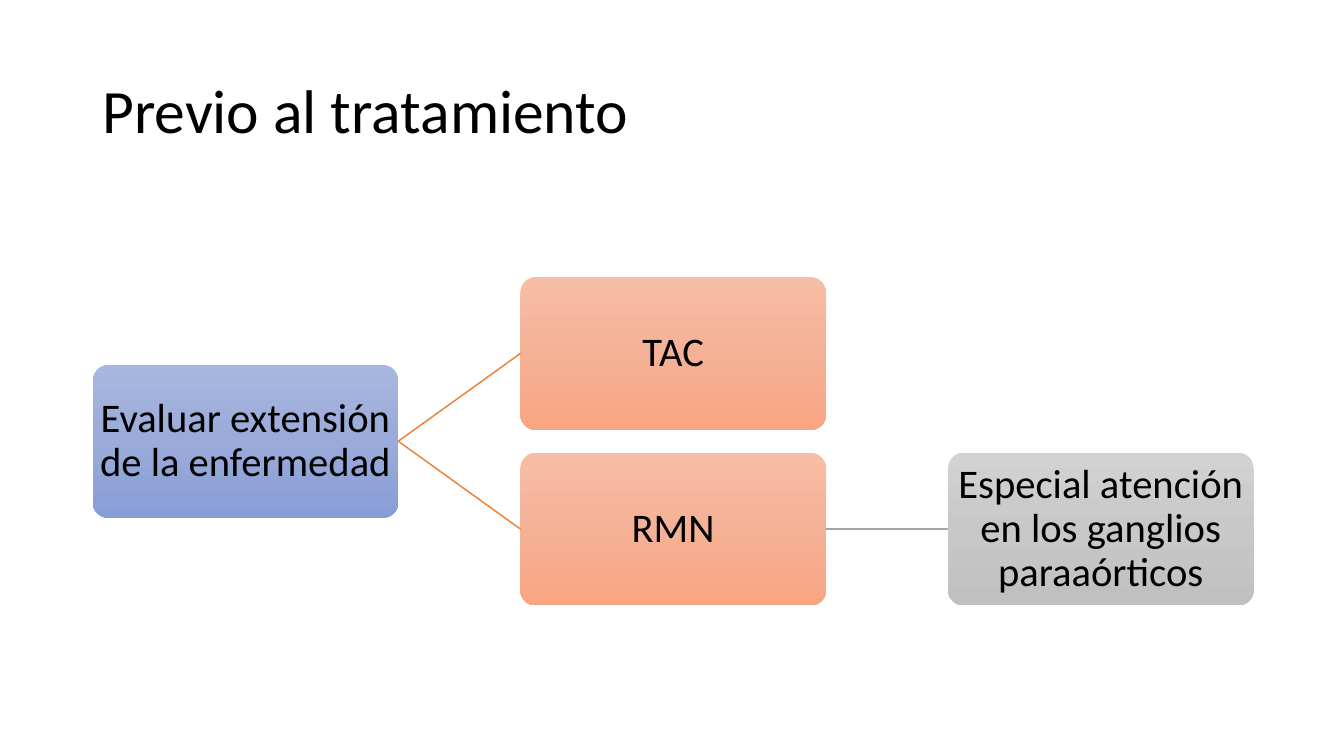
from copy import deepcopy

from pptx import Presentation
from pptx.dml.color import RGBColor
from pptx.enum.shapes import MSO_CONNECTOR as Connector, MSO_SHAPE as Preset
from pptx.enum.text import MSO_ANCHOR as Anchor, PP_ALIGN as Align
from pptx.oxml.ns import qn
from pptx.oxml.xmlchemy import OxmlElement
from pptx.util import Pt

BLACK = RGBColor(0x00, 0x00, 0x00)
ORANGE_LINE = RGBColor(0xED, 0x7D, 0x31)
GRAY_LINE = RGBColor(0xA5, 0xA5, 0xA5)
BLUE_FADE = (RGBColor(0xA8, 0xB7, 0xDF), RGBColor(0x9A, 0xAB, 0xD9), RGBColor(0x88, 0x9E, 0xD7))
ORANGE_FADE = (RGBColor(0xF7, 0xBD, 0xA5), RGBColor(0xF5, 0xB1, 0x96), RGBColor(0xF8, 0xA5, 0x82))
GRAY_FADE = (RGBColor(0xD2, 0xD2, 0xD2), RGBColor(0xC8, 0xC8, 0xC8), RGBColor(0xC0, 0xC0, 0xC0))

NODE_WIDTH, NODE_HEIGHT = 218.2, 109.1
TREE_LEFT, TREE_TOP = 66.3, 197.9
COLUMN_STEP, ROW_STEP = NODE_WIDTH * 1.4, NODE_HEIGHT * 1.15


def apply_format(target, values):
    for name, value in values.items():
        setattr(target, name, value)


def write_text(shape, text, size, align, inset_x, inset_y):
    frame = shape.text_frame
    apply_format(frame, {
        "word_wrap": True, "vertical_anchor": Anchor.MIDDLE,
        "margin_left": Pt(inset_x), "margin_right": Pt(inset_x),
        "margin_top": Pt(inset_y), "margin_bottom": Pt(inset_y),
    })
    para = frame.paragraphs[0]
    apply_format(para, {"alignment": align, "line_spacing": 0.9})
    span = para.add_run()
    span.text = text
    apply_format(span.font, {"name": "Calibri", "size": Pt(size)})
    span.font.color.rgb = BLACK


def fill_fade(shape, colors):
    shape.fill.gradient()
    shape.fill.gradient_angle = 270
    first = shape._element.spPr.find(f".//{qn('a:gs')}")
    first.addnext(deepcopy(first))
    for stop, position, color in zip(shape.fill.gradient_stops, (0, 0.5, 1), colors):
        stop.position = position
        stop.color.rgb = color


def add_title(page, text):
    box = page.shapes.add_textbox(Pt(66), Pt(28.8), Pt(828), Pt(104.4))
    write_text(box, text, 44, Align.LEFT, 7.2, 3.6)


def add_node(page, text, column, row, colors):
    left = TREE_LEFT + column * COLUMN_STEP
    top = TREE_TOP + row * ROW_STEP
    node = page.shapes.add_shape(
        Preset.ROUNDED_RECTANGLE, Pt(left), Pt(top), Pt(NODE_WIDTH), Pt(NODE_HEIGHT))
    node.adjustments[0] = 0.1
    node.shadow.inherit = False
    node.line.fill.background()
    fill_fade(node, colors)
    write_text(node, text, 29, Align.CENTER, 1.4, 1.4)
    return node


def add_branch(page, parent, child, color):
    branch = page.shapes.add_connector(Connector.STRAIGHT, 0, 0, 0, 0)
    branch.begin_connect(parent, 3)
    branch.end_connect(child, 1)
    branch.line.color.rgb = color
    branch.line.width = Pt(1)
    branch._element.spPr.append(OxmlElement("a:effectLst"))


def main():
    deck = Presentation()
    apply_format(deck, {"slide_width": Pt(960), "slide_height": Pt(540)})
    page = deck.slides.add_slide(deck.slide_layouts[6])
    add_title(page, "Previo al tratamiento")
    extent = add_node(page, "Evaluar extensión de la enfermedad", 0, 0.5, BLUE_FADE)
    scan = add_node(page, "TAC", 1, 0, ORANGE_FADE)
    resonance = add_node(page, "RMN", 1, 1, ORANGE_FADE)
    nodes = add_node(page, "Especial atención en los ganglios paraaórticos", 2, 1, GRAY_FADE)
    add_branch(page, extent, scan, ORANGE_LINE)
    add_branch(page, extent, resonance, ORANGE_LINE)
    add_branch(page, resonance, nodes, GRAY_LINE)
    deck.save("out.pptx")


if __name__ == "__main__":
    main()
